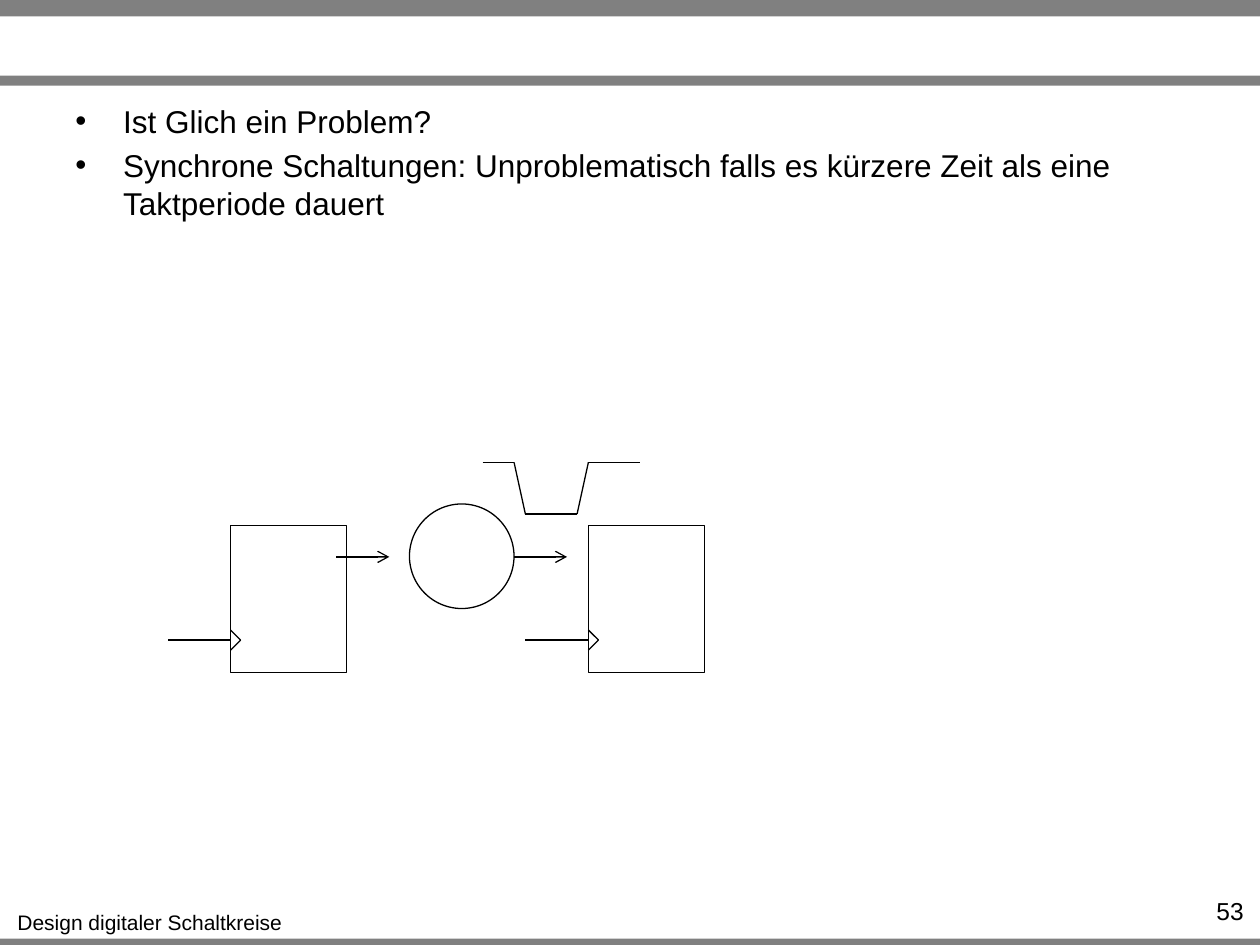
from lxml import etree
from pptx import Presentation
from pptx.dml.color import RGBColor
from pptx.enum.shapes import MSO_CONNECTOR, MSO_SHAPE
from pptx.enum.text import PP_ALIGN
from pptx.oxml.ns import qn
from pptx.util import Inches, Pt

RECT, OVAL = MSO_SHAPE.RECTANGLE, MSO_SHAPE.OVAL
STRAIGHT = MSO_CONNECTOR.STRAIGHT
LEFT, CENTER, RIGHT = PP_ALIGN.LEFT, PP_ALIGN.CENTER, PP_ALIGN.RIGHT
COLORS = {"bar": "808080", "ink": "000000"}
FONT = "Arial"
LINE_WIDTH = Pt(0.75)

BARS = [(7.45, 0.08), (0, 0.13), (0.6, 0.08)]
BULLETS = [
    "Ist Glich ein Problem?",
    "Synchrone Schaltungen: Unproblematisch falls es kürzere Zeit "
    "als eine Taktperiode dauert",
]
REGISTER_LEFTS = [1.83, 4.67]
CLOCK_Y = 5.08
SIGNAL_Y = 4.42
GLITCH = [(3.83, 3.67), (4.08, 3.67), (4.17, 4.08),
          (4.58, 4.08), (4.67, 3.67), (5.08, 3.67)]


def rgb(name):
    return RGBColor.from_string(COLORS[name])


def add_bar(slide, top, height):
    sp = slide.shapes.add_shape(RECT, 0, Inches(top), Inches(10), Inches(height))
    sp.shadow.inherit = False
    sp.fill.solid()
    sp.fill.fore_color.rgb = rgb("bar")
    sp.line.fill.background()


def add_outline(slide, kind, left, top, width, height):
    sp = slide.shapes.add_shape(kind, Inches(left), Inches(top),
                                Inches(width), Inches(height))
    sp.shadow.inherit = False
    sp.fill.background()
    sp.line.color.rgb = rgb("ink")
    sp.line.width = LINE_WIDTH


def add_line(shapes, start, end, arrow=False):
    line = shapes.add_connector(STRAIGHT, *map(Inches, start + end))
    line.line.color.rgb = rgb("ink")
    line.line.width = LINE_WIDTH
    if arrow:
        etree.SubElement(line.line._get_or_add_ln(), qn("a:tailEnd"), type="arrow")
    etree.SubElement(line._element.spPr, qn("a:effectLst"))


def add_polyline(shapes, points):
    for start, end in zip(points, points[1:]):
        add_line(shapes, start, end)


def add_bullet(p):
    pPr = p._p.get_or_add_pPr()
    pPr.set("marL", str(Inches(0.38)))
    pPr.set("indent", str(-Inches(0.38)))
    etree.SubElement(pPr, qn("a:buFont"), typeface=FONT)
    etree.SubElement(pPr, qn("a:buChar"), char="•")


def add_text(slide, box, lines, size, align=LEFT, wrap=True, bullets=False):
    tf = slide.shapes.add_textbox(*map(Inches, box)).text_frame
    tf.word_wrap = wrap
    for i, text in enumerate(lines):
        p = tf.paragraphs[0] if i == 0 else tf.add_paragraph()
        p.alignment = align
        if bullets:
            add_bullet(p)
        if i > 0:
            p.space_before = Pt(size * 0.2)
        r = p.add_run()
        r.text = text
        r.font.name = FONT
        r.font.size = Pt(size)
        r.font.color.rgb = rgb("ink")


def add_register(slide, left):
    """Draw a flip-flop with its clock notch and clock input."""
    add_outline(slide, RECT, left, 4.17, 0.92, 1.17)
    add_polyline(slide.shapes, [(left, CLOCK_Y - 0.08), (left + 0.08, CLOCK_Y),
                                (left, CLOCK_Y + 0.08)])
    add_line(slide.shapes, (left, CLOCK_Y), (left - 0.5, CLOCK_Y))


def main():
    prs = Presentation()
    prs.slide_width, prs.slide_height = Inches(10), Inches(7.5)
    slide = prs.slides.add_slide(prs.slide_layouts[6])

    for top, height in BARS:
        add_bar(slide, top, height)
    add_text(slide, (0.03, 7.17, 2.32, 0.3), ["Design digitaler Schaltkreise"],
             12, CENTER, wrap=False)
    add_text(slide, (0.5, 0.76, 9, 1.99), BULLETS, 18, bullets=True)
    add_text(slide, (9.1, 7.06, 0.87, 0.24), ["53"], 14, RIGHT)

    for left in REGISTER_LEFTS:
        add_register(slide, left)
    add_outline(slide, OVAL, 3.25, 4, 0.83, 0.83)
    for left in (2.67, 4.08):
        add_line(slide.shapes, (left, SIGNAL_Y), (left + 0.42, SIGNAL_Y), arrow=True)
    add_polyline(slide.shapes.add_group_shape().shapes, GLITCH)

    prs.save("out.pptx")


if __name__ == "__main__":
    main()
